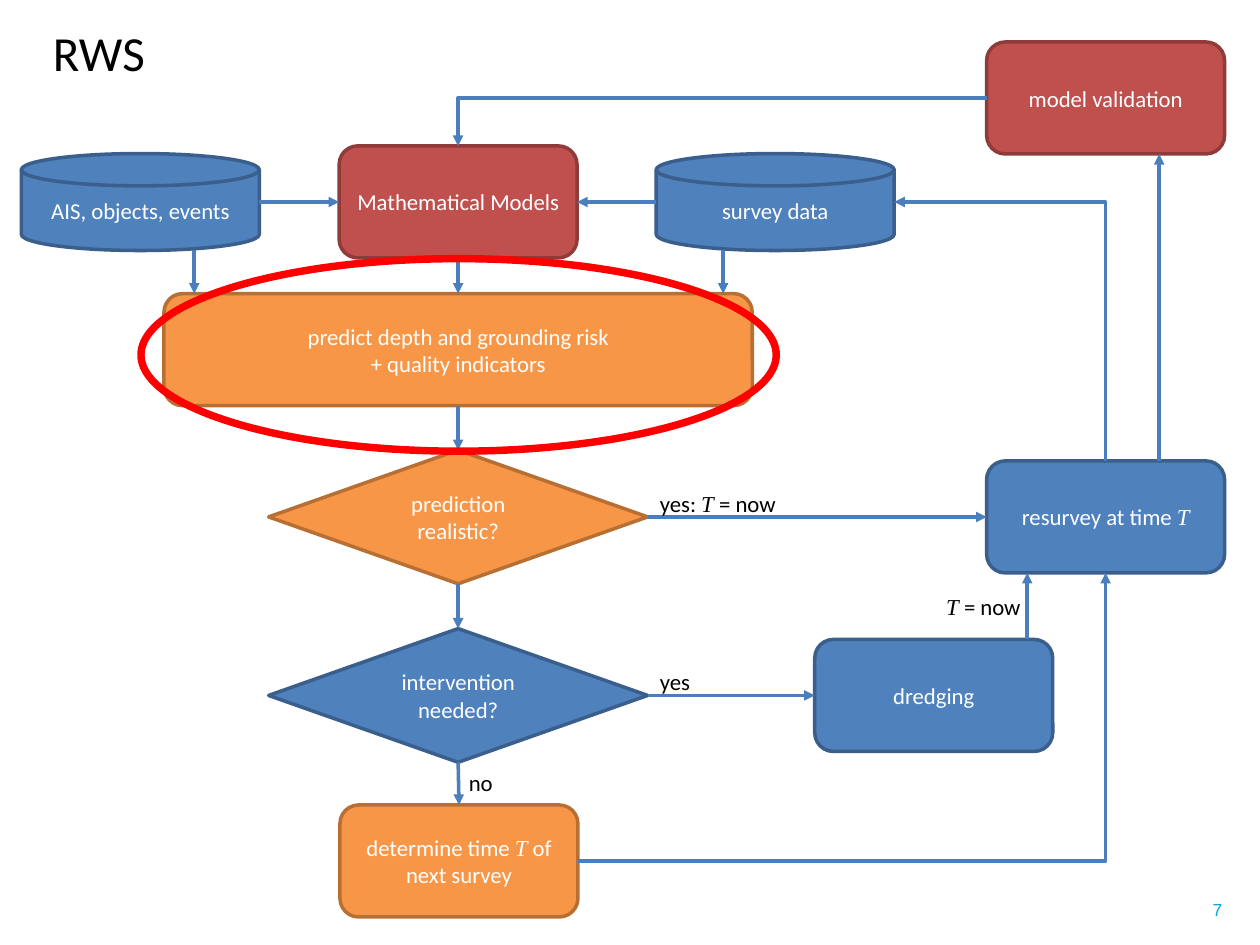
from lxml import etree
from pptx import Presentation
from pptx.dml.color import RGBColor
from pptx.enum.shapes import MSO_CONNECTOR, MSO_SHAPE
from pptx.enum.text import MSO_ANCHOR, PP_ALIGN
from pptx.oxml.ns import qn
from pptx.util import Pt

STRAIGHT, ELBOW = MSO_CONNECTOR.STRAIGHT, MSO_CONNECTOR.ELBOW
ROUNDED, OVAL = MSO_SHAPE.ROUNDED_RECTANGLE, MSO_SHAPE.OVAL
DISK, DECISION = MSO_SHAPE.FLOWCHART_MAGNETIC_DISK, MSO_SHAPE.FLOWCHART_DECISION
LEFT, CENTER, RIGHT = PP_ALIGN.LEFT, PP_ALIGN.CENTER, PP_ALIGN.RIGHT
TOP, MIDDLE = MSO_ANCHOR.TOP, MSO_ANCHOR.MIDDLE
SIDE_TOP, SIDE_LEFT, SIDE_BOTTOM, SIDE_RIGHT = range(4)

COLORS = {
    "blue": "4F81BD", "blue_line": "3A5F8C",
    "red": "C0504D", "red_line": "8E3B39",
    "orange": "F79646", "orange_line": "B76F34",
    "arrow": "4B7EBC", "highlight": "FF0000",
    "white": "FFFFFF", "black": "000000", "number": "00A6D6",
}
BOX = (136, 64)
DISK_SIZE = (136, 55.4)
DIAMOND = (216.6, 76.4)
MID_X = 261.8
DISK_Y = 115.4


def rgb(name):
    return RGBColor.from_string(COLORS[name])


def write(tf, text, color, align=LEFT, anchor=TOP, size=13, font="Calibri"):
    """Text between bars is set as an italic variable."""
    tf.word_wrap = True
    tf.vertical_anchor = anchor
    p = tf.paragraphs[0]
    p.alignment = align
    p.font.size = Pt(size)
    p.font.name = font
    p.font.color.rgb = rgb(color)
    for i, part in enumerate(text.split("|")):
        for j, line in enumerate(part.split("\n")):
            if j:
                p.add_line_break()
            if line:
                r = p.add_run()
                r.text = line
                if i % 2:
                    r.font.name = "Times New Roman"
                    r.font.italic = True


def add_node(s, kind, x, y, size, color, text):
    sp = s.shapes.add_shape(kind, Pt(x), Pt(y), Pt(size[0]), Pt(size[1]))
    sp.shadow.inherit = False
    sp.fill.solid()
    sp.fill.fore_color.rgb = rgb(color)
    sp.line.color.rgb = rgb(color + "_line")
    sp.line.width = Pt(2)
    write(sp.text_frame, text, "white", CENTER, MIDDLE)
    return sp


def add_label(s, x, y, w, h, text, color="black", **style):
    sp = s.shapes.add_textbox(Pt(x), Pt(y), Pt(w), Pt(h))
    write(sp.text_frame, text, color, **style)


def add_arrow(s, start, end, begin=None, finish=None, kind=STRAIGHT, arrow="tailEnd"):
    cx = s.shapes.add_connector(kind, *(Pt(v) for v in start + end))
    if begin:
        cx.begin_connect(*begin)
    if finish:
        cx.end_connect(*finish)
    cx.line.color.rgb = rgb("arrow")
    cx.line.width = Pt(2)
    sp_pr = cx._element.spPr
    if kind == ELBOW:
        sp_pr.find(qn("a:prstGeom")).set("prst", "bentConnector2")
    etree.SubElement(sp_pr.find(qn("a:ln")), qn("a:" + arrow), type="triangle")
    etree.SubElement(sp_pr, qn("a:effectLst"))


def add_title(s, text):
    sp = s.shapes.title
    sp.left, sp.top, sp.width, sp.height = Pt(23), Pt(9.4), Pt(88), Pt(41)
    write(sp.text_frame, text, "black", size=28)


def add_highlight(s):
    sp = s.shapes.add_shape(OVAL, Pt(80.6), Pt(147.8), Pt(363), Pt(110))
    sp.shadow.inherit = False
    sp.fill.background()
    sp.line.color.rgb = rgb("highlight")
    sp.line.width = Pt(4.25)


def main():
    prs = Presentation()
    prs.slide_width, prs.slide_height = Pt(720), Pt(540)
    s = prs.slides.add_slide(prs.slide_layouts[5])
    add_title(s, "RWS")
    add_label(s, 523.4, 505.4, 182.2, 28.8, "7", "number",
              align=RIGHT, anchor=MIDDLE, size=10, font="Arial")

    box_x, diamond_x = MID_X - BOX[0] / 2, MID_X - DIAMOND[0] / 2
    right_x = 563.8
    add_node(s, DISK, 12.2, 87.8, DISK_SIZE, "blue", "AIS, objects, events")
    add_node(s, DISK, 375, 87.8, DISK_SIZE, "blue", "survey data")
    models = add_node(s, ROUNDED, box_x, 83.4, BOX, "red", "Mathematical Models")
    predict = add_node(s, ROUNDED, 93.7, 167.8, (336.2, 64), "orange",
                       "predict depth and grounding risk\n+ quality indicators")
    realistic = add_node(s, DECISION, diamond_x, 257.2, DIAMOND, "orange",
                         "prediction realistic?")
    needed = add_node(s, DECISION, diamond_x, 359.2, DIAMOND, "blue",
                      "intervention needed?")
    determine = add_node(s, ROUNDED, box_x + 0.5, 460, BOX, "orange",
                         "determine time |T |of next survey")
    resurvey = add_node(s, ROUNDED, right_x, 263.4, BOX, "blue", "resurvey at time |T")
    dredging = add_node(s, ROUNDED, 465.6, 365.4, BOX, "blue", "dredging")
    validation = add_node(s, ROUNDED, right_x, 24, BOX, "red", "model validation")

    column = [models, predict, realistic, needed, determine]
    for upper, lower in zip(column, column[1:]):
        add_arrow(s, (0, 0), (0, 0), (upper, SIDE_BOTTOM), (lower, SIDE_TOP))
    for source, target in [(realistic, resurvey), (needed, dredging)]:
        add_arrow(s, (0, 0), (0, 0), (source, SIDE_RIGHT), (target, SIDE_LEFT))
    for x, side in [(148.2, SIDE_LEFT), (375, SIDE_RIGHT)]:
        add_arrow(s, (x, DISK_Y), (MID_X, DISK_Y), finish=(models, side))
    for x, y1, y2 in [(111, 143, 167.8), (413.2, 143, 167.8),
                      (587, 365.4, 327.4), (662.4, 263.4, 88)]:
        add_arrow(s, (x, y1), (x, y2))

    add_arrow(s, (0, 0), (0, 0), (determine, SIDE_RIGHT), (resurvey, SIDE_BOTTOM), ELBOW)
    add_arrow(s, (0, 0), (0, 0), (validation, SIDE_LEFT), (models, SIDE_TOP), ELBOW)
    add_arrow(s, (511, DISK_Y), (632, 263.4), None, (resurvey, SIDE_TOP), ELBOW, "headEnd")

    for x, y, text in [(370, 276.4, "yes: |T |= now"), (370, 378, "yes"),
                       (533.6, 335, "|T |= now"), (260.8, 435.8, "no")]:
        add_label(s, x, y, 93, 23, text)
    add_highlight(s)
    prs.save("out.pptx")


if __name__ == "__main__":
    main()
